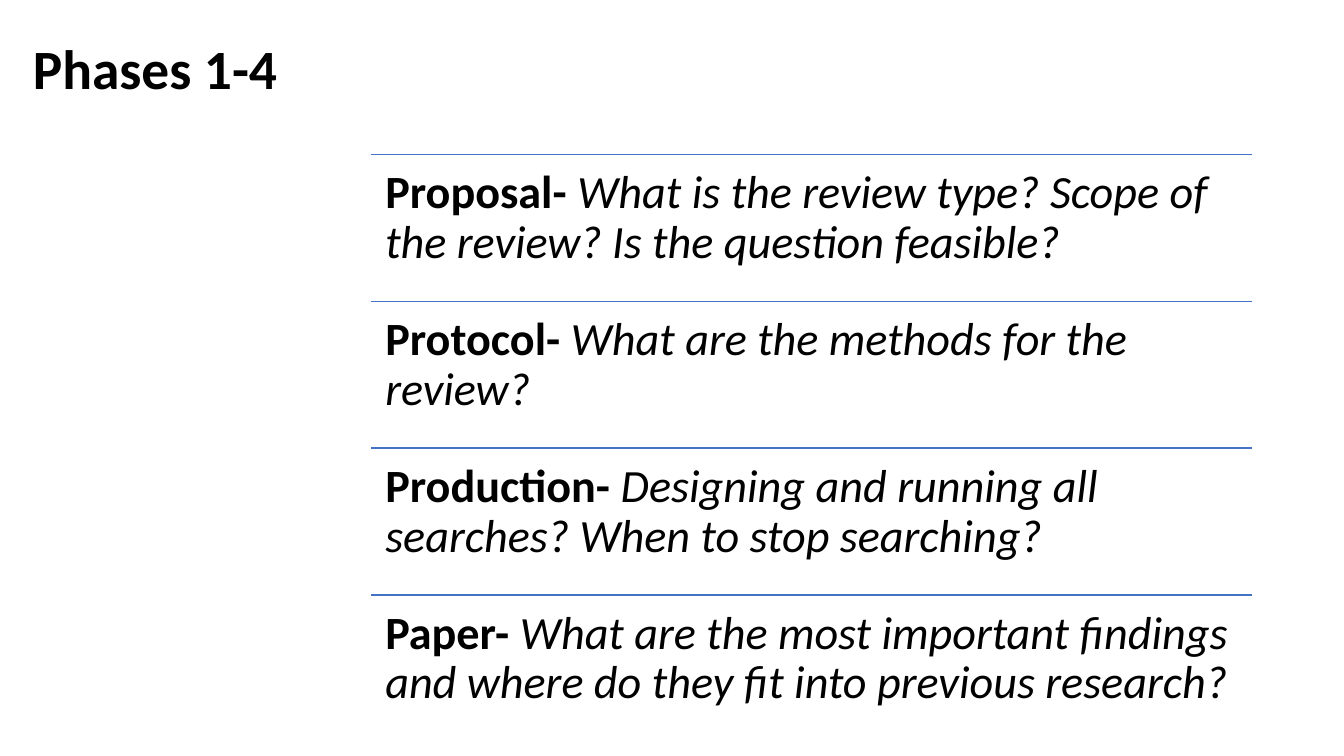
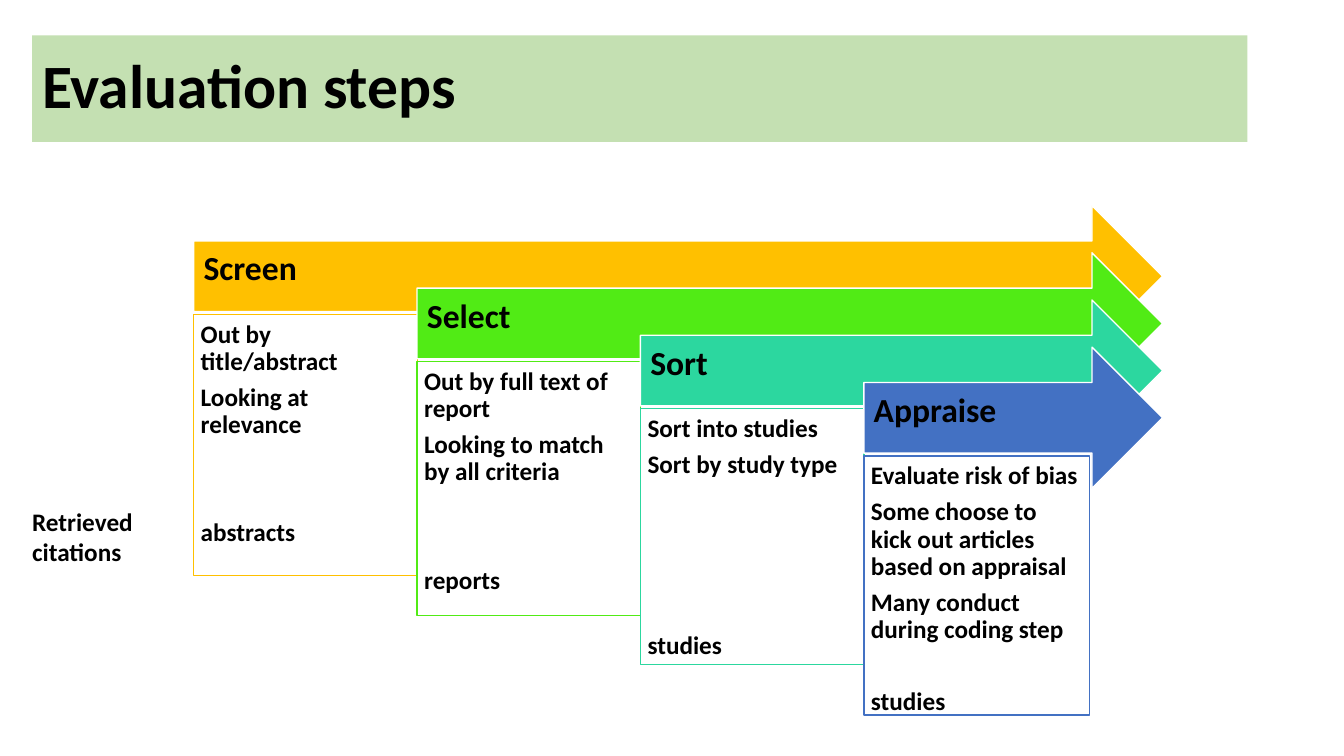
from lxml import etree
from pptx import Presentation
from pptx.dml.color import RGBColor as Rgb
from pptx.enum.shapes import MSO_CONNECTOR as Conn, MSO_SHAPE as Geo
from pptx.enum.text import MSO_ANCHOR as Anchor, PP_ALIGN as Align
from pptx.oxml.ns import qn
from pptx.util import Cm, Pt

COLORS = {
    "ink": "000000", "paper": "FFFFFF", "rule": "4472C4", "band": "C4E0B2",
    "screen": "FFC000", "select": "51EB15", "sort": "2CD79F",
    "appraise": "4371C3",
}
FONT = "Calibri"
TIGHT = 0.9
MARGINS = (0.25, 0.13, 0.25, 0.13)
PARA_GAP = 6.3
LINE_STEP = 25.8  # one 18 pt line plus the gap above it

PHASES = [
    ("Proposal- ", "What is the review type? Scope of the review? "
                   "Is the question feasible?"),
    ("Protocol- ", "What are the methods for the review?"),
    ("Production- ", "Designing and running all searches? "
                     "When to stop searching?"),
    ("Paper- ", "What are the most important findings and where do they fit "
                "into previous research?"),
]

# name, color, notes, lines left free, result, note box width and height
STEPS = [
    ("Screen", "screen", ["Out by title/abstract", "Looking at relevance"],
     2, "abstracts", 5.64, 6.58),
    ("Select", "select",
     ["Out by full text of report", "Looking to match by all criteria"],
     2, "reports", 5.64, 6.4),
    ("Sort", "sort", ["Sort into studies", "Sort by study type"],
     4, "studies", 5.64, 6.45),
    ("Appraise", "appraise",
     ["Evaluate risk of bias",
      "Some choose to kick out articles based on appraisal",
      "Many conduct during coding step"],
     1, "studies", 5.69, 6.53),
]


def rgb(name):
    return Rgb.from_string(COLORS[name])


def set_frame(shape, margins=MARGINS, anchor=Anchor.TOP):
    frame = shape.text_frame
    frame.word_wrap = True
    frame.vertical_anchor = anchor
    (frame.margin_left, frame.margin_top,
     frame.margin_right, frame.margin_bottom) = map(Cm, margins)
    return frame


def add_para(frame, runs, size, before=0, spacing=TIGHT):
    """Write (text, bold, italic) runs, using the first paragraph if free."""
    para = frame.paragraphs[0]
    if para.runs:
        para = frame.add_paragraph()
    para.alignment = Align.LEFT
    para.line_spacing = spacing
    para.space_before = Pt(before)
    for text, bold, italic in runs:
        run = para.add_run()
        run.text = text
        font = run.font
        font.name, font.size = FONT, Pt(size)
        font.bold, font.italic = bold, italic
        font.color.rgb = rgb("ink")


def add_bold(frame, text, size, before=0, spacing=TIGHT):
    add_para(frame, [(text, True, False)], size, before, spacing)


def add_text(slide, box, **style):
    return set_frame(slide.shapes.add_textbox(*map(Cm, box)), **style)


def add_block(slide, geo, box, fill, line=None):
    shape = slide.shapes.add_shape(geo, *map(Cm, box))
    shape.shadow.inherit = False
    shape.fill.solid()
    shape.fill.fore_color.rgb = rgb(fill)
    if line:
        shape.line.color.rgb = rgb(line)
        shape.line.width = Pt(1)
    else:
        shape.line.fill.background()
    return shape


def add_title(slide, text, box, size, fill=None):
    if fill:
        shape = add_block(slide, Geo.RECTANGLE, box, fill)
    else:
        shape = slide.shapes.add_textbox(*map(Cm, box))
    add_bold(set_frame(shape, anchor=Anchor.MIDDLE), text, size)


def add_rule(slide, left, top, width):
    line = slide.shapes.add_connector(
        Conn.STRAIGHT, Cm(left), Cm(top), Cm(left + width), Cm(top))
    line.line.color.rgb = rgb("rule")
    line.line.width = Pt(1)
    etree.SubElement(line._element.spPr, qn("a:effectLst"))


def add_phases(slide, box):
    """Split the box into equal rows, each under a rule."""
    left, top, width, height = box
    row = height / len(PHASES)
    for i, (name, ask) in enumerate(PHASES):
        y = top + i * row
        add_rule(slide, left, y, width)
        frame = add_text(slide, (left, y, width, row), margins=(0.36,) * 4)
        add_para(frame, [(name, True, False), (ask, False, True)], 33)


def add_step(slide, step, left, top, right):
    """Draw an arrow that ends at right, with a note box under its tail."""
    name, color, notes, free, result, width, height = step
    arrow = add_block(slide, Geo.RIGHT_ARROW,
                      (left, top, right - left, 3.56), color, "paper")
    add_bold(set_frame(arrow, (0.25, 0.25, 0.71, 0.56), Anchor.MIDDLE),
             name, 24)
    card = add_block(slide, Geo.RECTANGLE,
                     (left, top + 2.74, width, height), "paper", color)
    frame = set_frame(card, (0.18,) * 4)
    for i, note in enumerate(notes):
        add_bold(frame, note, 18, PARA_GAP if i else 0)
    add_bold(frame, result, 18, PARA_GAP + free * LINE_STEP)


def add_steps(slide, left, top, right):
    for i, step in enumerate(STEPS):
        add_step(slide, step, left + i * 5.63, top + i * 1.19, right)


def build_phases(slide):
    add_title(slide, "Phases 1-4", (0.58, 0.91, 9.53, 1.8), 39.6)
    add_phases(slide, (9.35, 3.89, 22.19, 14.8))


def build_steps(slide):
    add_title(slide, "Evaluation steps", (0.81, 0.89, 30.63, 2.69), 44, "band")
    frame = add_text(slide, (0.56, 12.62, 3.91, 1.8))
    add_bold(frame, "Retrieved citations", 18, spacing=1.0)
    add_steps(slide, 4.88, 5.18, 29.3)


def main():
    deck = Presentation()
    deck.slide_width, deck.slide_height = Cm(33.87), Cm(19.05)
    blank = deck.slide_layouts[6]
    for build in (build_phases, build_steps):
        build(deck.slides.add_slide(blank))
    deck.save("out.pptx")


if __name__ == "__main__":
    main()
